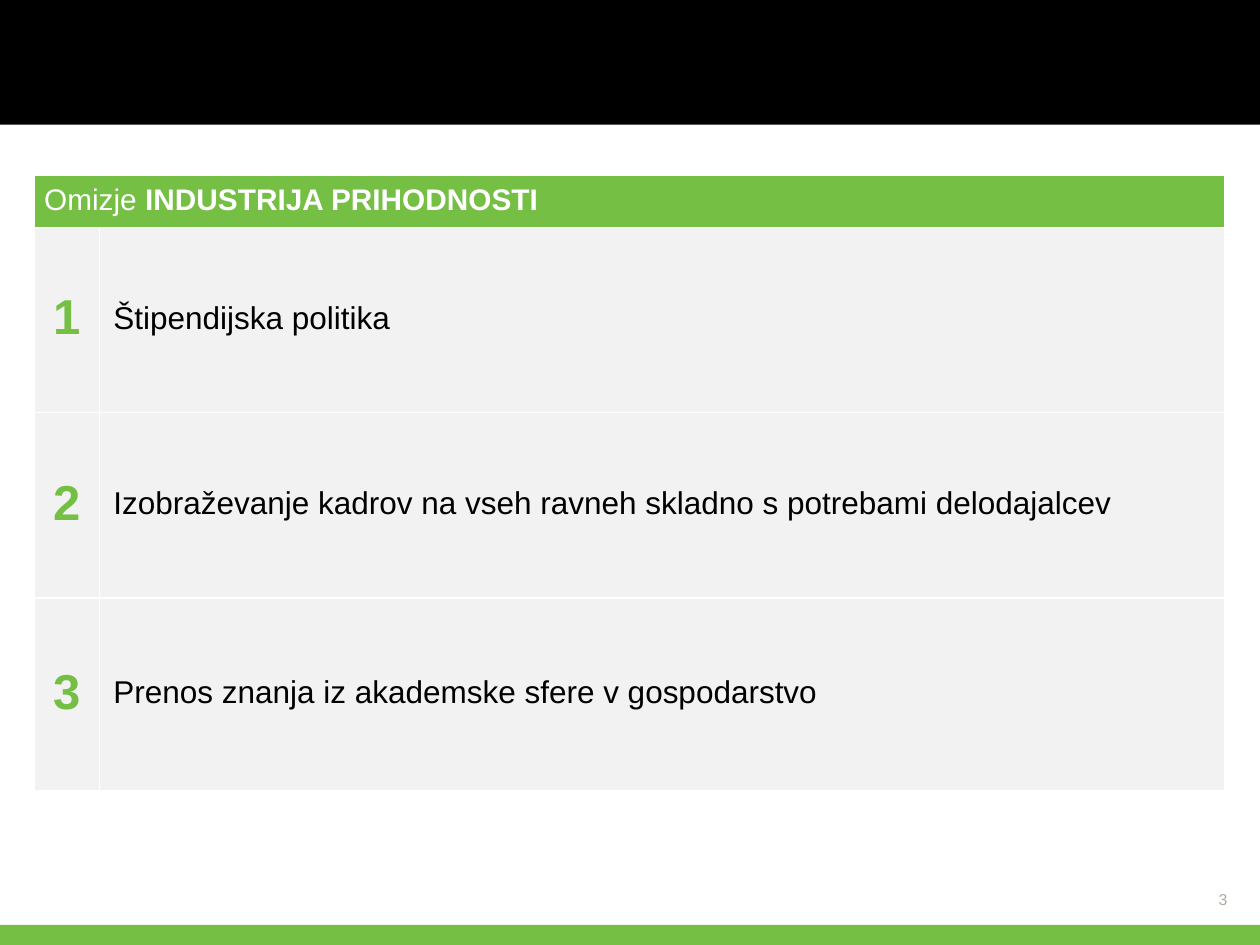
import dataclasses
import typing

import pptx
import pptx.dml.color
import pptx.enum.shapes
import pptx.enum.text
import pptx.oxml
import pptx.oxml.ns
import pptx.util

Inches = pptx.util.Inches
Align = pptx.enum.text.PP_ALIGN
Anchor = pptx.enum.text.MSO_ANCHOR


@dataclasses.dataclass(frozen=True)
class Theme:
    font: str = "Arial"
    green: str = "74BF44"
    black: str = "000000"
    white: str = "FFFFFF"
    pale: str = "F2F2F2"
    gray: str = "ADABA1"
    head: int = 17
    body: int = 18
    digit: int = 28
    page: int = 9
    rule: int = 1


class Band(typing.NamedTuple):
    top: float
    height: float
    color: str


THEME = Theme()
WIDTH, HEIGHT = 10, 7.5
BANDS = [Band(7.34, 0.16, THEME.green), Band(0, 0.99, THEME.black)]
TOPICS = [
    "Štipendijska politika",
    "Izobraževanje kadrov na vseh ravneh skladno s potrebami delodajalcev",
    "Prenos znanja iz akademske sfere v gospodarstvo",
]
COLS = [0.52, 8.93]
ROWS = [0.41, 1.47, 1.47, 1.53]


def rgb(color: str) -> pptx.dml.color.RGBColor:
    return pptx.dml.color.RGBColor.from_string(color)


def write(para, text: str, *, size: int, color: str, bold: bool = False,
          align=Align.LEFT, line: float = 1.0) -> None:
    """Add one run of text to a paragraph."""
    para.alignment = align
    para.line_spacing = line
    run = para.add_run()
    run.text = text
    run.font.name = THEME.font
    run.font.size = pptx.util.Pt(size)
    run.font.bold = bold
    run.font.color.rgb = rgb(color)


def draw_band(slide, band: Band) -> None:
    shape = slide.shapes.add_shape(
        pptx.enum.shapes.MSO_SHAPE.RECTANGLE,
        0, Inches(band.top), Inches(WIDTH), Inches(band.height))
    shape.shadow.inherit = False
    shape.fill.solid()
    shape.fill.fore_color.rgb = rgb(band.color)
    shape.line.fill.background()


def style_cell(cell, fill: str, pad: float, left: float) -> None:
    """Set borders, fill, margins and anchor of a table cell."""
    props = cell._tc.get_or_add_tcPr()
    for side in ("lnL", "lnR", "lnT", "lnB"):
        props.append(pptx.oxml.parse_xml(
            f'<a:{side} {pptx.oxml.ns.nsdecls("a")} w="{pptx.util.Pt(THEME.rule)}">'
            f'<a:solidFill><a:srgbClr val="{THEME.white}"/></a:solidFill></a:{side}>'))
    cell.fill.solid()
    cell.fill.fore_color.rgb = rgb(fill)
    cell.margin_left = Inches(left)
    cell.margin_right = cell.margin_top = cell.margin_bottom = Inches(pad)
    cell.vertical_anchor = Anchor.MIDDLE


def draw_table(slide) -> None:
    table = slide.shapes.add_table(
        len(ROWS), len(COLS), Inches(0.27), Inches(1.39),
        Inches(sum(COLS)), Inches(sum(ROWS))).table
    for col, width in zip(table.columns, COLS):
        col.width = Inches(width)
    for row, height in zip(table.rows, ROWS):
        row.height = Inches(height)

    # Header across both columns
    for cell in table.rows[0].cells:
        style_cell(cell, THEME.green, pad=0.08, left=0.08)
    head = table.cell(0, 0)
    head.merge(table.cell(0, 1))
    para = head.text_frame.paragraphs[0]
    for text, bold in (("Omizje ", False), ("INDUSTRIJA PRIHODNOSTI", True)):
        write(para, text, size=THEME.head, color=THEME.white, bold=bold, line=0.9)

    # Numbered topics
    for num, topic in enumerate(TOPICS, start=1):
        mark, body = table.rows[num].cells
        style_cell(mark, THEME.pale, pad=0.04, left=0.04)
        style_cell(body, THEME.pale, pad=0.04, left=0.11)
        write(mark.text_frame.paragraphs[0], str(num), size=THEME.digit,
              color=THEME.green, bold=True, align=Align.CENTER, line=0.9)
        write(body.text_frame.paragraphs[0], topic, size=THEME.body,
              color=THEME.black, line=0.9)


def draw_page(slide, num: int) -> None:
    frame = slide.shapes.add_textbox(
        Inches(9.45), Inches(7.07), Inches(0.29), Inches(0.14)).text_frame
    frame.word_wrap = True
    frame.margin_left = frame.margin_right = 0
    frame.margin_top = frame.margin_bottom = 0
    frame.vertical_anchor = Anchor.BOTTOM
    write(frame.paragraphs[0], str(num), size=THEME.page, color=THEME.gray,
          align=Align.RIGHT)


def main() -> None:
    deck = pptx.Presentation()
    deck.slide_width, deck.slide_height = Inches(WIDTH), Inches(HEIGHT)
    # The slide shows no title, so it takes the blank layout
    slide = deck.slides.add_slide(deck.slide_layouts[6])
    for band in BANDS:
        draw_band(slide, band)
    draw_page(slide, 3)
    draw_table(slide)
    deck.save("out.pptx")


if __name__ == "__main__":
    main()
